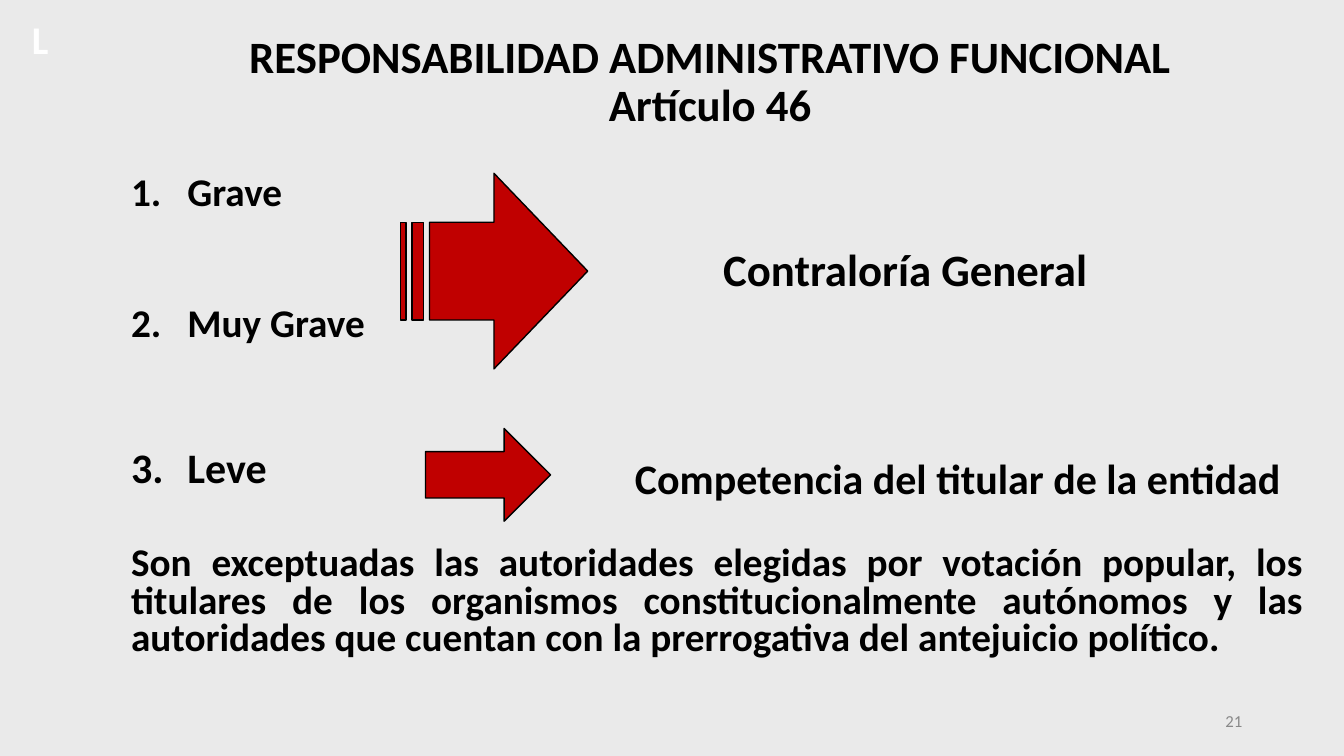
from dataclasses import dataclass

from lxml.etree import SubElement
from pptx import Presentation
from pptx.dml.color import RGBColor
from pptx.enum.shapes import MSO_SHAPE as Shape
from pptx.enum.text import MSO_ANCHOR as Anchor, MSO_AUTO_SIZE as Fit, PP_ALIGN as Align
from pptx.oxml.ns import qn
from pptx.util import Inches, Pt

WIDE, HIGH = Inches(13.33), Inches(7.5)
BLACK = RGBColor(0x00, 0x00, 0x00)
WHITE = RGBColor(0xFF, 0xFF, 0xFF)
GRAY = RGBColor(0x89, 0x89, 0x89)
PALE = RGBColor(0xEA, 0xEA, 0xEA)
RED = RGBColor(0xC0, 0x00, 0x00)
FONT = "Calibri"
HANG = 4.2


@dataclass
class Box:
    left: float
    top: float
    width: float
    height: float

    def spot(self) -> tuple[int, int, int, int]:
        return (across(self.left), down(self.top),
                across(self.width), down(self.height))


@dataclass
class Item:
    text: str
    size: int
    gap: float = 0
    number: int = 0
    indent: float = 0
    level: int = 0
    align: Align = Align.LEFT


@dataclass
class Label:
    text: str
    box: Box
    size: int
    color: RGBColor = BLACK
    bold: bool = True
    align: Align = Align.LEFT
    anchor: Anchor = Anchor.TOP


@dataclass
class Arrow:
    kind: Shape
    box: Box


TITLE = Box(14.55, 3.73, 76.6, 14.53)
BODY = Box(9, 22.67, 88.67, 66.6)

ITEMS = [
    Item("Grave", 28, number=1),
    Item("Contraloría General", 32, gap=27, indent=44.05, level=4),
    Item("Muy Grave", 28, gap=9, number=2),
    Item("Leve", 30, gap=76, number=3),
    Item("Son exceptuadas las autoridades elegidas por votación popular, los "
         "titulares de los organismos constitucionalmente autónomos y las "
         "autoridades que cuentan con la prerrogativa del antejuicio político.",
         28, gap=39, align=Align.JUSTIFY),
]

ARROWS = [
    Arrow(Shape.STRIPED_RIGHT_ARROW, Box(29.78, 22.93, 13.95, 25.87)),
    Arrow(Shape.RIGHT_ARROW, Box(31.66, 56.67, 9.3, 12.27)),
]

LABELS = [
    Label("Competencia del titular de la entidad",
          Box(46.5, 59.26, 52, 7.5), 30),
    Label("L", Box(1.63, 1.33, 4, 7), 28, color=WHITE),
    Label("21", Box(70.67, 92.67, 22.5, 5.33), 12, color=GRAY, bold=False,
          align=Align.RIGHT, anchor=Anchor.MIDDLE),
]


def across(share: float) -> int:
    return round(WIDE * share / 100)


def down(share: float) -> int:
    return round(HIGH * share / 100)


def place(shape, box: Box) -> None:
    shape.left, shape.top, shape.width, shape.height = box.spot()


def style(para, size: int, color: RGBColor = BLACK, bold: bool = True) -> None:
    for run in para.runs:
        font = run.font
        font.name, font.size, font.bold = FONT, Pt(size), bold
        font.color.rgb = color


def mark(para, item: Item) -> None:
    props = para._p.get_or_add_pPr()
    hang = across(HANG) if item.number else 0
    props.set("marL", str(hang or across(item.indent)))
    props.set("indent", str(-hang))
    if item.number:
        SubElement(props, qn("a:buAutoNum"), type="arabicPeriod",
                   startAt=str(item.number))
    else:
        SubElement(props, qn("a:buNone"))


def head(slide) -> None:
    title = slide.shapes.title
    place(title, TITLE)
    frame = title.text_frame
    frame.text = "RESPONSABILIDAD ADMINISTRATIVO FUNCIONAL\vArtículo 46"
    frame.auto_size = Fit.NONE
    frame.vertical_anchor = Anchor.MIDDLE
    para = frame.paragraphs[0]
    para.alignment = Align.CENTER
    para.line_spacing = 0.9
    style(para, 32)


def fill(slide) -> None:
    body = slide.placeholders[1]
    place(body, BODY)
    frame = body.text_frame
    frame.text = "\n".join(item.text for item in ITEMS)
    frame.auto_size = Fit.NONE
    for para, item in zip(frame.paragraphs, ITEMS):
        mark(para, item)
        para.level = item.level
        para.alignment = item.align
        para.line_spacing = 0.8
        para.space_before = Pt(item.gap)
        style(para, item.size)


def point(slide, arrow: Arrow) -> None:
    shape = slide.shapes.add_shape(arrow.kind, *arrow.box.spot())
    shape.shadow.inherit = False
    shape.fill.solid()
    shape.fill.fore_color.rgb = RED
    shape.line.color.rgb = BLACK
    shape.line.width = Pt(1)


def write(slide, label: Label) -> None:
    frame = slide.shapes.add_textbox(*label.box.spot()).text_frame
    frame.text = label.text
    frame.word_wrap = True
    frame.vertical_anchor = label.anchor
    para = frame.paragraphs[0]
    para.alignment = label.align
    style(para, label.size, label.color, label.bold)


def main() -> None:
    deck = Presentation()
    deck.slide_width, deck.slide_height = WIDE, HIGH
    slide = deck.slides.add_slide(deck.slide_layouts[1])
    slide.background.fill.solid()
    slide.background.fill.fore_color.rgb = PALE
    head(slide)
    fill(slide)
    for arrow in ARROWS:
        point(slide, arrow)
    for label in LABELS:
        write(slide, label)
    deck.save("out.pptx")


if __name__ == "__main__":
    main()
